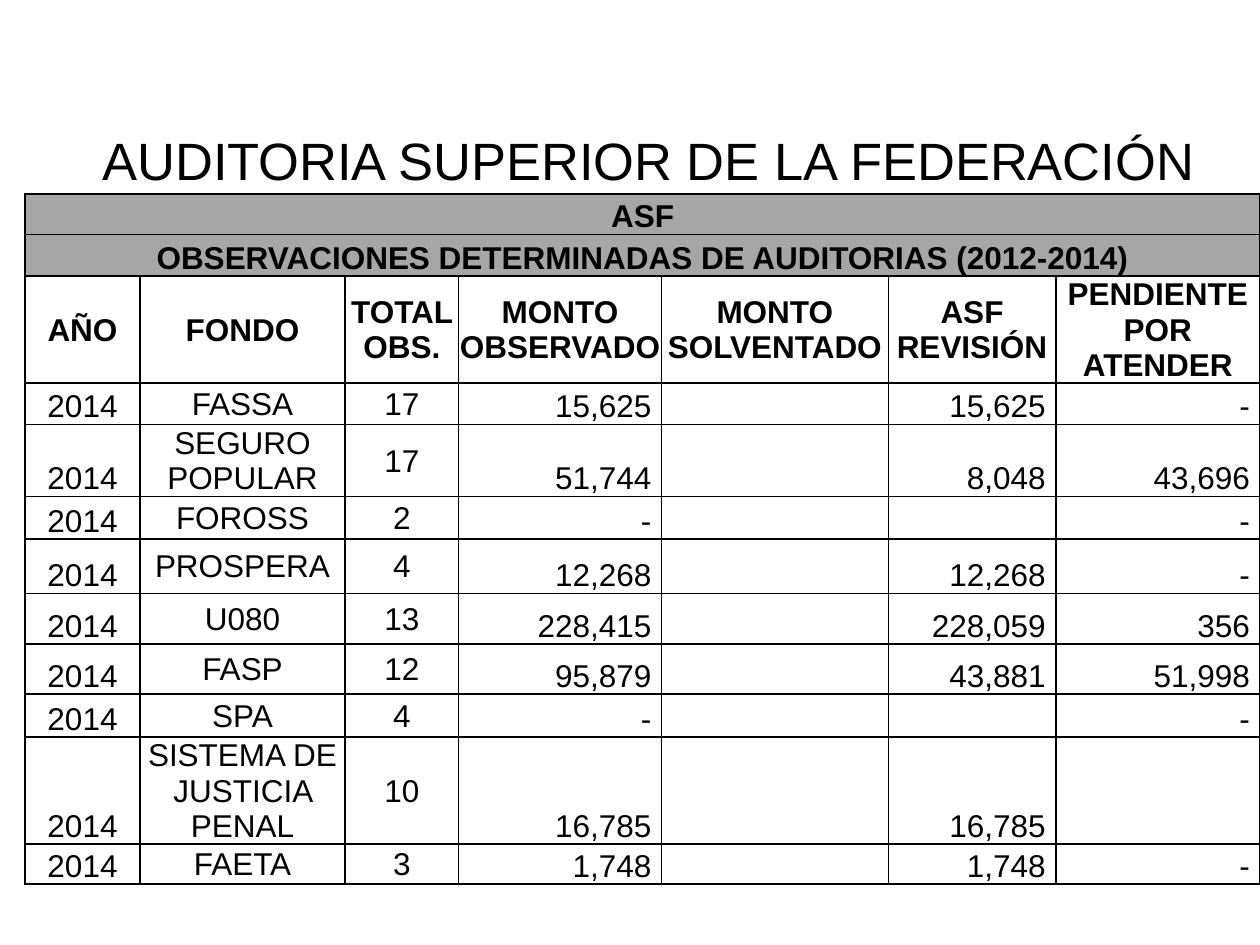
from lxml.etree import SubElement
from pptx import Presentation
from pptx.dml.color import RGBColor
from pptx.enum.text import MSO_ANCHOR, PP_ALIGN
from pptx.oxml.ns import qn
from pptx.util import Inches, Pt

BLACK = RGBColor(0x00, 0x00, 0x00)
GRAY = RGBColor(0xA6, 0xA6, 0xA6)
WHITE = RGBColor(0xFF, 0xFF, 0xFF)

BANNERS = ["ASF", "OBSERVACIONES DETERMINADAS DE AUDITORIAS (2012-2014)"]
HEADINGS = ["AÑO", "FONDO", "TOTAL OBS.", "MONTO OBSERVADO", "MONTO SOLVENTADO",
            "ASF REVISIÓN", "PENDIENTE POR ATENDER"]
FUNDS = [
    ["FASSA", "17", "15,625", "", "15,625", "-"],
    ["SEGURO POPULAR", "17", "51,744", "", "8,048", "43,696"],
    ["FOROSS", "2", "-", "", "", "-"],
    ["PROSPERA", "4", "12,268", "", "12,268", "-"],
    ["U080", "13", "228,415", "", "228,059", "356"],
    ["FASP", "12", "95,879", "", "43,881", "51,998"],
    ["SPA", "4", "-", "", "", "-"],
    ["SISTEMA DE JUSTICIA PENAL", "10", "16,785", "", "16,785", ""],
    ["FAETA", "3", "1,748", "", "1,748", "-"],
]
COLUMN_WIDTHS = [0.91, 1.63, 0.9, 1.61, 1.8, 1.33, 1.62]
ROW_HEIGHTS = [0.32, 0.33, 0.85, 0.33, 0.57, 0.34, 0.43, 0.4, 0.4, 0.34, 0.85, 0.29]
FIRST_FUND_ROW = len(BANNERS) + 1
FIRST_AMOUNT_COLUMN = 3


class SlideBuilder:
    """Holds the text style and the current slide, and adds elements to it."""

    font_format = {"name": "Arial", "size": Pt(18), "bold": False}

    def __init__(self, presentation):
        self.slide = presentation.slides.add_slide(presentation.slide_layouts[6])

    def add_text(self, paragraph, text, alignment=PP_ALIGN.CENTER, **changes):
        paragraph.alignment = alignment
        if not text:
            return
        run = paragraph.add_run()
        run.text = text
        for name, value in {**self.font_format, **changes}.items():
            setattr(run.font, name, value)
        run.font.color.rgb = BLACK

    def add_title(self, text, left, top, width, height):
        shape = self.slide.shapes.add_textbox(
            Inches(left), Inches(top), Inches(width), Inches(height))
        frame_format = {"word_wrap": True, "vertical_anchor": MSO_ANCHOR.MIDDLE,
                        "margin_top": 0, "margin_bottom": 0}
        for name, value in frame_format.items():
            setattr(shape.text_frame, name, value)
        paragraph = shape.text_frame.paragraphs[0]
        paragraph.line_spacing = 0.9
        self.add_text(paragraph, text, size=Pt(30))

    def add_borders(self, cell):
        properties = cell._tc.get_or_add_tcPr()
        for index, side in enumerate(("lnL", "lnR", "lnT", "lnB")):
            line = SubElement(properties, qn(f"a:{side}"), w=str(Pt(1)))
            fill = SubElement(line, qn("a:solidFill"))
            SubElement(fill, qn("a:srgbClr"), val=str(BLACK))
            properties.insert(index, line)

    def format_cell(self, cell, row, column):
        is_fund = row >= FIRST_FUND_ROW
        is_amount = is_fund and column >= FIRST_AMOUNT_COLUMN
        is_banner = row < len(BANNERS)
        is_bottom = is_banner or is_amount or (is_fund and column == 0)
        cell_format = {
            "vertical_anchor": MSO_ANCHOR.BOTTOM if is_bottom else MSO_ANCHOR.MIDDLE,
            "margin_left": Inches(0.01),
            "margin_top": Inches(0.01),
            "margin_right": Inches(0.08 if is_amount else 0.01),
            "margin_bottom": 0,
        }
        for name, value in cell_format.items():
            setattr(cell, name, value)
        cell.fill.solid()
        cell.fill.fore_color.rgb = GRAY if is_banner else WHITE
        self.add_borders(cell)
        return PP_ALIGN.RIGHT if is_amount else PP_ALIGN.CENTER

    def add_table(self, rows, left, top):
        table = self.slide.shapes.add_table(
            len(rows), len(COLUMN_WIDTHS), Inches(left), Inches(top),
            Inches(sum(COLUMN_WIDTHS)), Inches(sum(ROW_HEIGHTS))).table
        for column, width in zip(table.columns, COLUMN_WIDTHS):
            column.width = Inches(width)
        for row, height in zip(table.rows, ROW_HEIGHTS):
            row.height = Inches(height)
        for row, texts in enumerate(rows):
            for column, text in enumerate(texts):
                cell = table.cell(row, column)
                alignment = self.format_cell(cell, row, column)
                self.add_text(cell.text_frame.paragraphs[0], text, alignment,
                              bold=row < FIRST_FUND_ROW)
        for row in range(len(BANNERS)):
            table.cell(row, 0).merge(table.cell(row, len(COLUMN_WIDTHS) - 1))


def main():
    presentation = Presentation()
    presentation.slide_width = Inches(10)
    presentation.slide_height = Inches(7.5)
    builder = SlideBuilder(presentation)
    banners = [[text] + [""] * (len(HEADINGS) - 1) for text in BANNERS]
    funds = [["2014", *fund] for fund in FUNDS]
    builder.add_table([*banners, HEADINGS, *funds], 0.2, 1.54)
    builder.add_title("AUDITORIA SUPERIOR DE LA FEDERACIÓN", 0.3, 1.06, 9.7, 0.47)
    presentation.save("out.pptx")


if __name__ == "__main__":
    main()
